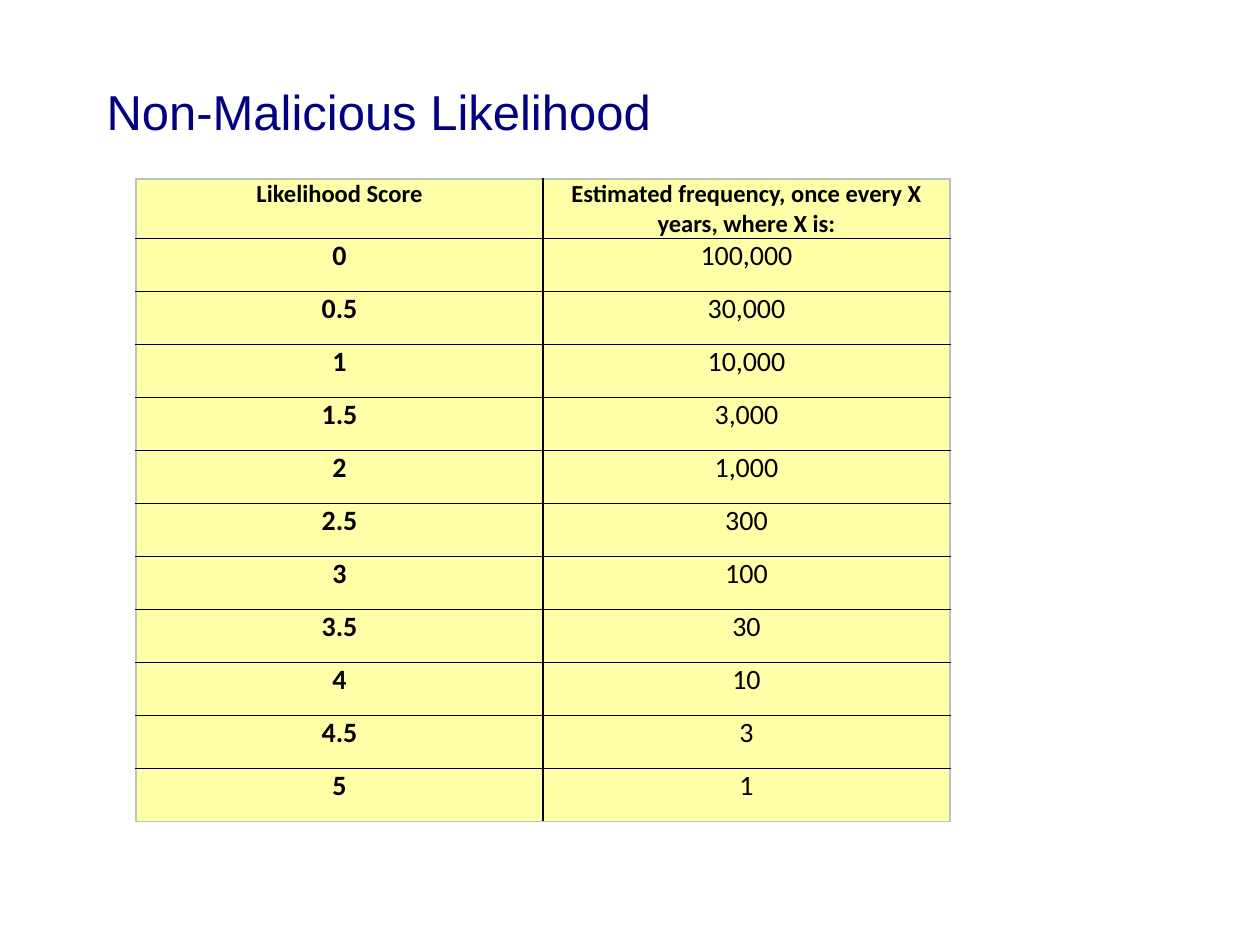
from lxml.etree import SubElement
from pptx import Presentation
from pptx.dml.color import RGBColor
from pptx.enum.text import MSO_ANCHOR, PP_ALIGN
from pptx.oxml.ns import qn
from pptx.util import Pt

SCALE = 914400 / 126
COLORS = {"title": "000080", "text": "000000", "cell": "FFFFA7",
          "grid": "000000", "edge": "C0C0C0"}
HEADS = ("Likelihood Score", "Estimated frequency, once every X years, where X is:")
ROWS = [
    ("0", "100,000"), ("0.5", "30,000"), ("1", "10,000"), ("1.5", "3,000"),
    ("2", "1,000"), ("2.5", "300"), ("3", "100"), ("3.5", "30"),
    ("4", "10"), ("4.5", "3"), ("5", "1"),
]


def px(count):
    """Turn pixels into EMU."""
    return round(count * SCALE)


def assign(target, **values):
    """Set each named attribute on the target."""
    for name, value in values.items():
        setattr(target, name, value)


def style(para, color, **values):
    """Format the font of a paragraph."""
    assign(para.font, **values)
    para.font.color.rgb = RGBColor.from_string(COLORS[color])


def border(cell, sides):
    """Draw the four cell borders in the given colours."""
    props = cell._tc.get_or_add_tcPr()
    for side, color in sides.items():
        line = SubElement(props, qn(f"a:ln{side}"), w=str(Pt(1)))
        fill = SubElement(line, qn("a:solidFill"))
        SubElement(fill, qn("a:srgbClr"), val=COLORS[color])


def heading(slide, box, text):
    """Place and format the slide title."""
    title = slide.shapes.title
    assign(title, **dict(zip(("left", "top", "width", "height"), map(px, box))))
    frame = title.text_frame
    assign(frame, text=text, vertical_anchor=MSO_ANCHOR.MIDDLE, word_wrap=True)
    para = frame.paragraphs[0]
    para.alignment = PP_ALIGN.LEFT
    style(para, "title", name="Arial", size=Pt(28))


def scores(slide, box, rows):
    """Fill a bordered table with the score rows, header first."""
    high, wide = len(rows), len(rows[0])
    table = slide.shapes.add_table(high, wide, *map(px, box)).table
    assign(table, first_row=False, horz_banding=False)
    for r, row in enumerate(rows):
        for c, text in enumerate(row):
            cell = table.cell(r, c)
            border(cell, {
                "L": "grid" if c else "edge",
                "R": "grid" if c < wide - 1 else "edge",
                "T": "grid" if r else "edge",
                "B": "grid" if r < high - 1 else "edge",
            })
            cell.fill.solid()
            cell.fill.fore_color.rgb = RGBColor.from_string(COLORS["cell"])
            assign(cell, text=text, vertical_anchor=MSO_ANCHOR.TOP,
                   margin_left=px(9), margin_right=px(9),
                   margin_top=0, margin_bottom=0)
            para = cell.text_frame.paragraphs[0]
            para.alignment = PP_ALIGN.CENTER
            style(para, "text", name="Calibri", size=Pt(16 if r else 14),
                  bold=r == 0 or c == 0)


def main():
    """Build and save the slide."""
    deck = Presentation()
    assign(deck, slide_width=px(1260), slide_height=px(945))
    slide = deck.slides.add_slide(deck.slide_layouts[5])
    heading(slide, (94, 32, 1071, 158), "Non-Malicious Likelihood")
    scores(slide, (136, 179, 814, 636), [HEADS, *ROWS])
    deck.save("out.pptx")


if __name__ == "__main__":
    main()
